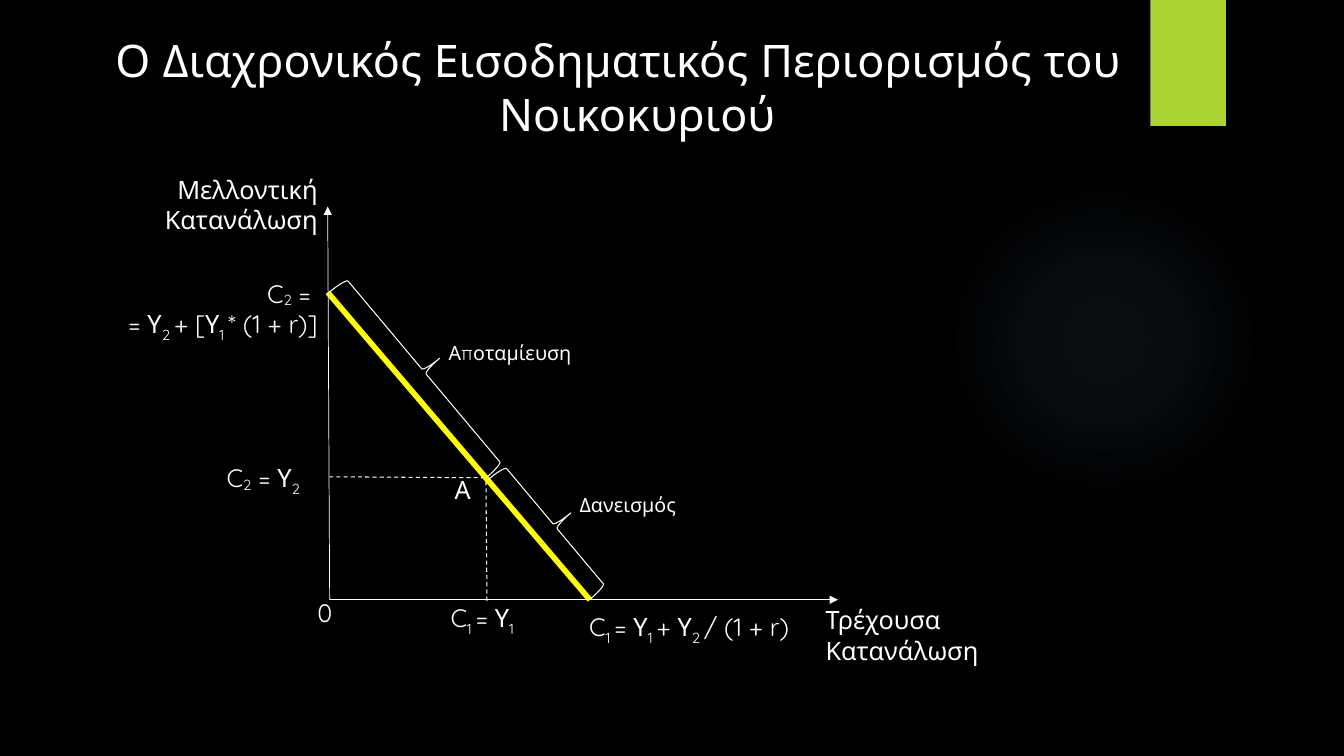
from dataclasses import dataclass
from typing import NamedTuple

from lxml.etree import SubElement
from pptx import Presentation
from pptx.dml.color import RGBColor
from pptx.enum.dml import MSO_LINE
from pptx.enum.shapes import MSO_CONNECTOR, MSO_SHAPE
from pptx.enum.text import MSO_ANCHOR, PP_ALIGN
from pptx.oxml import parse_xml
from pptx.oxml.ns import nsdecls, qn
from pptx.util import Inches, Pt

BLACK = RGBColor(0x00, 0x00, 0x00)
WHITE = RGBColor(0xFF, 0xFF, 0xFF)
YELLOW = RGBColor(0xFF, 0xFF, 0x00)
GREEN = RGBColor(0xAC, 0xD4, 0x33)
GLOW = "7AC4F0"
FONT = "Quicksand"
SUB, LOW = -25, -10  # baseline shifts in percent


class Run(NamedTuple):
    text: str
    baseline: int = 0


@dataclass
class Label:
    box: tuple[float, float, float, float]
    lines: list[list[Run]]
    align: PP_ALIGN = PP_ALIGN.LEFT
    size: int = 18


@dataclass
class Line:
    start: tuple[float, float]
    end: tuple[float, float]
    width: float
    color: RGBColor = WHITE
    dashed: bool = False
    arrow: bool = False


@dataclass
class Brace:
    box: tuple[float, float, float, float]


LINES = [
    Line((4.81, 4.74), (3.27, 4.73), 0.75, dashed=True),
    Line((4.83, 5.96), (4.82, 4.74), 0.75, dashed=True),
    Line((3.25, 2.9), (5.85, 5.95), 4, YELLOW),
    Line((3.27, 5.95), (8.31, 5.95), 0.5, arrow=True),
    Line((3.27, 5.95), (3.25, 2.05), 0.5, arrow=True),
]
BRACES = [Brace((4, 2.48, 0.41, 2.41)), Brace((5.3, 4.44, 0.41, 1.56))]
LABELS = [
    Label((0.19, 1.68, 3.06, 0.68), [[Run("Μελλοντική")], [Run("Κατανάλωση")]], PP_ALIGN.RIGHT),
    Label((8.09, 5.95, 1.86, 0.48), [[Run("Τρέχουσα")], [Run("Κατανάλωση")]]),
    Label((0.35, 2.71, 2.9, 0.71), [
        [Run("C"), Run("2", LOW), Run(" = ")],
        [Run("= Υ"), Run("2 ", SUB), Run("+ [Υ"), Run("1 ", SUB), Run("* (1 + r)]")],
    ], PP_ALIGN.RIGHT),
    Label((2.15, 4.54, 1.18, 0.54), [[Run("C"), Run("2", LOW), Run(" = Υ"), Run("2", SUB)]]),
    Label((4.37, 5.93, 1.33, 0.43), [[Run("C"), Run("1 ", SUB), Run("= Υ"), Run("1", SUB)]]),
    Label((5.51, 6.02, 2.65, 0.4), [[
        Run("C"), Run("1 ", SUB), Run("= Υ"), Run("1 ", SUB),
        Run("+ Υ"), Run("2 ", SUB), Run("/ (1 + r)"),
    ]], PP_ALIGN.CENTER),
    Label((4.41, 4.66, 0.35, 0.38), [[Run("Α")]]),
    Label((3.05, 5.88, 0.45, 0.43), [[Run("0")]]),
    Label((4.35, 3.33, 1.48, 0.34), [[Run("Αποταμίευση")]], size=14),
    Label((5.65, 4.84, 1.48, 0.34), [[Run("Δανεισμός")]], size=14),
]


def set_font(p, size: int) -> None:
    p.font.name, p.font.size = FONT, Pt(size)
    p.font.color.rgb = WHITE


def add_shape(slide, kind: MSO_SHAPE, box: tuple[float, ...]):
    sp = slide.shapes.add_shape(kind, *map(Inches, box))
    sp.shadow.inherit = False
    return sp


def add_backdrop(slide) -> None:
    """Draw the faint round glow and the green tab of the theme."""
    sp = add_shape(slide, MSO_SHAPE.OVAL, (9.41, 1.83, 3.08, 3.08))
    sp.line.fill.background()
    stops = "".join(
        f'<a:gs pos="{pos}000"><a:srgbClr val="{GLOW}"><a:alpha val="{alpha}000"/></a:srgbClr></a:gs>'
        for pos, alpha in ((0, 7), (36, 6), (69, 0), (100, 0)))
    sp.element.spPr.find(qn("a:prstGeom")).addnext(parse_xml(
        f'<a:gradFill {nsdecls("a")}><a:gsLst>{stops}</a:gsLst><a:path path="circle">'
        '<a:fillToRect l="50000" t="50000" r="50000" b="50000"/></a:path></a:gradFill>'))
    tab = add_shape(slide, MSO_SHAPE.RECTANGLE, (11.41, 0, 0.75, 1.25))
    tab.fill.solid()
    tab.fill.fore_color.rgb = GREEN
    tab.line.fill.background()


def add_title(slide, text: str) -> None:
    title = slide.shapes.title
    title.left, title.top, title.width, title.height = map(Inches, (1.01, 0.3, 10.24, 1.12))
    tf = title.text_frame
    tf.text = text
    tf.word_wrap = True
    tf.vertical_anchor = MSO_ANCHOR.MIDDLE
    p = tf.paragraphs[0]
    p.alignment = PP_ALIGN.CENTER
    pPr = p._p.get_or_add_pPr()
    pPr.set("marL", str(Inches(0.38)))
    pPr.set("indent", str(Inches(-0.38)))
    set_font(p, 32)


def add_line(slide, line: Line) -> None:
    cxn = slide.shapes.add_connector(
        MSO_CONNECTOR.STRAIGHT, *map(Inches, line.start + line.end))
    cxn.line.color.rgb = line.color
    cxn.line.width = Pt(line.width)
    if line.dashed:
        cxn.line.dash_style = MSO_LINE.DASH
    if line.arrow:
        SubElement(cxn.line._get_or_add_ln(), qn("a:tailEnd"), type="triangle")
    SubElement(cxn.element.spPr, qn("a:effectLst"))


def add_brace(slide, brace: Brace) -> None:
    sp = add_shape(slide, MSO_SHAPE.RIGHT_BRACE, brace.box)
    sp.rotation = 320
    sp.fill.background()
    sp.line.color.rgb = WHITE
    sp.line.width = Pt(0.75)


def add_label(slide, label: Label) -> None:
    tf = slide.shapes.add_textbox(*map(Inches, label.box)).text_frame
    tf.word_wrap = True
    for i, line in enumerate(label.lines):
        p = tf.add_paragraph() if i else tf.paragraphs[0]
        p.alignment = label.align
        set_font(p, label.size)
        for run in line:
            r = p.add_run()
            r.text = run.text
            if run.baseline:
                r.font._element.set("baseline", f"{run.baseline}000")


def main() -> None:
    prs = Presentation()
    prs.slide_width, prs.slide_height = Inches(13.33), Inches(7.5)
    slide = prs.slides.add_slide(prs.slide_layouts[5])
    slide.background.fill.solid()
    slide.background.fill.fore_color.rgb = BLACK
    add_backdrop(slide)
    add_title(slide, "Ο Διαχρονικός Εισοδηματικός Περιορισμός του Νοικοκυριού")
    for line in LINES:
        add_line(slide, line)
    for brace in BRACES:
        add_brace(slide, brace)
    for label in LABELS:
        add_label(slide, label)
    prs.save("out.pptx")


if __name__ == "__main__":
    main()
